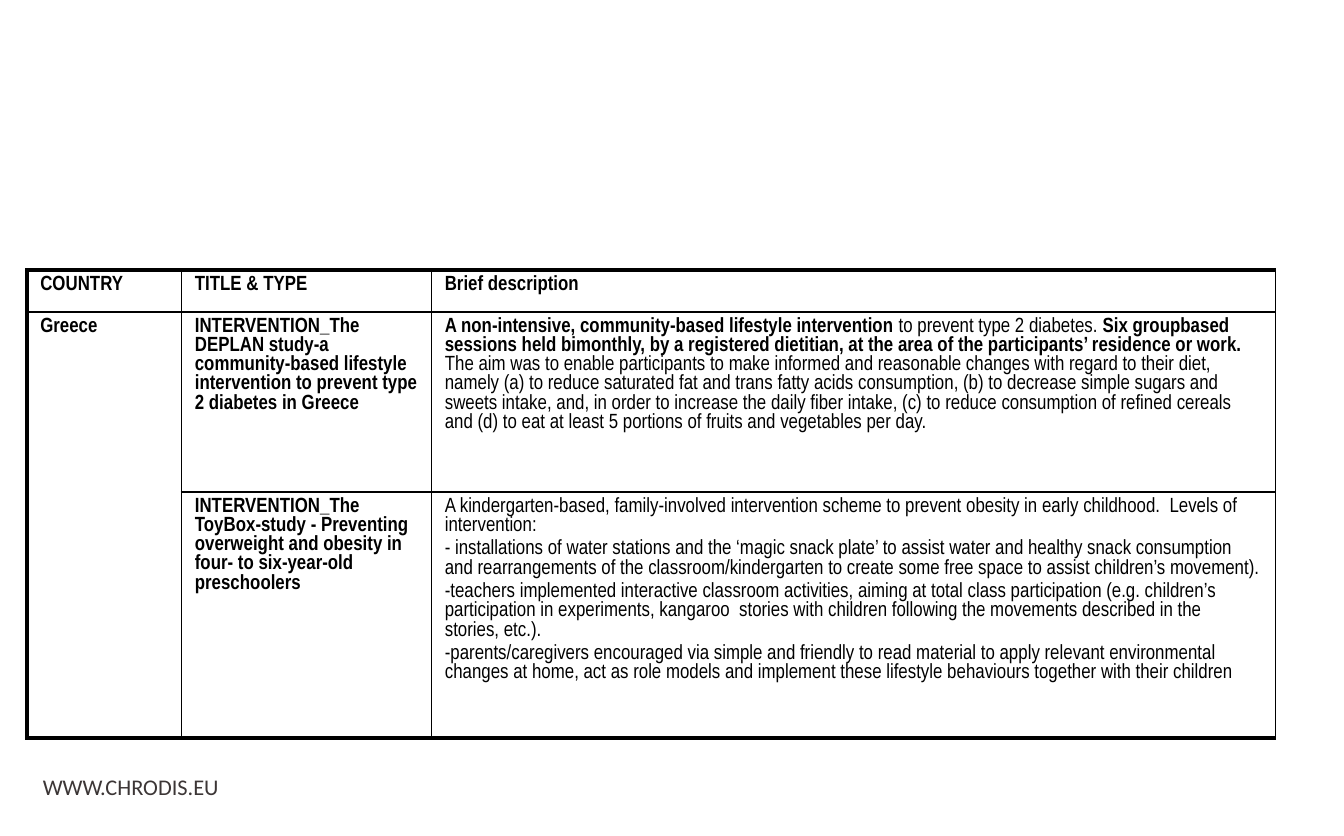
from dataclasses import dataclass
from typing import NamedTuple

from lxml import etree
from pptx import Presentation
from pptx import util as u
from pptx.dml.color import RGBColor
from pptx.enum import text
from pptx.oxml.ns import qn


@dataclass(frozen=True)
class Theme:
    ink: str = "000000"
    footer_ink: str = "3C3636"
    table_font: str = "Arial Narrow"
    footer_font: str = "Calibri"
    table_size: float = 11
    footer_size: float = 12
    paragraph_gap: float = 0.2  # share of the type size
    thin: float = 1
    thick: float = 2.25


class Run(NamedTuple):
    words: str
    bold: bool = False


class Entry(NamedTuple):
    row: int
    column: int
    paragraphs: list[list[Run]]


THEME = Theme()
SLIDE_WIDTH, SLIDE_HEIGHT = 10, 6.22
TABLE_LEFT, TABLE_TOP = 0.2, 2.01
COLUMNS = (1.15, 1.86, 6.28)
ROWS = (0.31, 1.34, 1.83)


def bold(words: str) -> list[list[Run]]:
    return [[Run(words, True)]]


ENTRIES = [
    Entry(0, 0, bold("COUNTRY")),
    Entry(0, 1, bold("TITLE & TYPE")),
    Entry(0, 2, bold("Brief description")),
    Entry(1, 0, bold("Greece")),
    Entry(1, 1, bold("INTERVENTION_The DEPLAN study-a community-based lifestyle "
                     "intervention to prevent type 2 diabetes in Greece")),
    Entry(1, 2, [[
        Run("A non-intensive, community-based lifestyle intervention ", True),
        Run("to prevent type 2 diabetes. "),
        Run("Six groupbased  sessions held bimonthly, by a registered dietitian, "
            "at the area of the participants’ residence or work. ", True),
        Run("The aim was to enable participants to make informed and reasonable "
            "changes with regard to their diet, namely (a) to reduce saturated fat "
            "and trans fatty acids consumption, (b) to decrease simple sugars and "
            "sweets intake, and, in order to increase the daily fiber intake, (c) to "
            "reduce consumption of refined cereals and (d) to eat at least 5 portions "
            "of fruits and vegetables per day."),
    ]]),
    Entry(2, 1, bold("INTERVENTION_The ToyBox-study - Preventing overweight and "
                     "obesity in four- to six-year-old preschoolers")),
    Entry(2, 2, [
        [Run("A kindergarten-based, family-involved intervention scheme to prevent "
             "obesity in early childhood.  Levels of intervention:")],
        [Run("- installations of water stations and the ‘magic snack plate’ to assist "
             "water and healthy snack consumption and rearrangements of the "
             "classroom/kindergarten to create some free space to assist children’s "
             "movement).")],
        [Run("-teachers implemented interactive classroom activities, aiming at total "
             "class participation (e.g. children’s participation in experiments, "
             "kangaroo  stories with children following the movements described in "
             "the stories, etc.).")],
        [Run("-parents/caregivers encouraged via simple and friendly to read material "
             "to apply relevant environmental changes at home, act as role models and "
             "implement these lifestyle behaviours together with their children")],
    ]),
]


def set_font(font, name: str, size: float, colour: str) -> None:
    font.name = name
    font.size = u.Pt(size)
    font.color.rgb = RGBColor.from_string(colour)


def draw_borders(cell, row: int, column: int) -> None:
    """Thick lines on the left, top and bottom of the table, thin elsewhere."""
    outer = {"L": column == 0, "R": False, "T": row == 0, "B": row == len(ROWS) - 1}
    properties = cell._tc.get_or_add_tcPr()
    for side, is_outer in outer.items():
        width = THEME.thick if is_outer else THEME.thin
        line = etree.SubElement(properties, qn(f"a:ln{side}"), w=str(u.Pt(width)))
        fill = etree.SubElement(line, qn("a:solidFill"))
        etree.SubElement(fill, qn("a:srgbClr"), val=THEME.ink)


def write_entry(cell, entry: Entry) -> None:
    frame = cell.text_frame
    for index, runs in enumerate(entry.paragraphs):
        paragraph = frame.add_paragraph() if index else frame.paragraphs[0]
        if index:
            paragraph.space_before = u.Pt(THEME.table_size * THEME.paragraph_gap)
        set_font(paragraph.font, THEME.table_font, THEME.table_size, THEME.ink)
        for part in runs:
            run = paragraph.add_run()
            run.text = part.words
            set_font(run.font, THEME.table_font, THEME.table_size, THEME.ink)
            run.font.bold = part.bold


def draw_table(slide) -> None:
    table = slide.shapes.add_table(
        len(ROWS), len(COLUMNS), u.Inches(TABLE_LEFT), u.Inches(TABLE_TOP),
        u.Inches(sum(COLUMNS)), u.Inches(sum(ROWS))).table
    table.first_row = table.horz_banding = False
    for column, width in zip(table.columns, COLUMNS):
        column.width = u.Inches(width)
    for row, height in zip(table.rows, ROWS):
        row.height = u.Inches(height)

    # The country spans both of its interventions
    table.cell(1, 0).merge(table.cell(2, 0))
    for row in range(len(ROWS)):
        for column in range(len(COLUMNS)):
            cell = table.cell(row, column)
            cell.margin_left = cell.margin_right = u.Inches(0.1)
            cell.margin_top = cell.margin_bottom = u.Inches(0.04)
            last_row = len(ROWS) - 1 if cell.is_merge_origin else row
            draw_borders(cell, last_row, column)
            cell.fill.background()
    for entry in ENTRIES:
        write_entry(table.cell(entry.row, entry.column), entry)


def draw_footer(slide) -> None:
    footer = slide.shapes.add_textbox(
        u.Inches(0.22), u.Inches(5.7), u.Inches(2.7), u.Inches(0.3))
    frame = footer.text_frame
    frame.word_wrap = True
    frame.vertical_anchor = text.MSO_ANCHOR.TOP
    address = frame.paragraphs[0]
    address.text = "WWW.CHRODIS.EU"
    set_font(address.font, THEME.footer_font, THEME.footer_size, THEME.footer_ink)


def main() -> None:
    deck = Presentation()
    deck.slide_width = u.Inches(SLIDE_WIDTH)
    deck.slide_height = u.Inches(SLIDE_HEIGHT)
    slide = deck.slides.add_slide(deck.slide_layouts[6])
    draw_footer(slide)
    draw_table(slide)
    deck.save("out.pptx")


if __name__ == "__main__":
    main()
